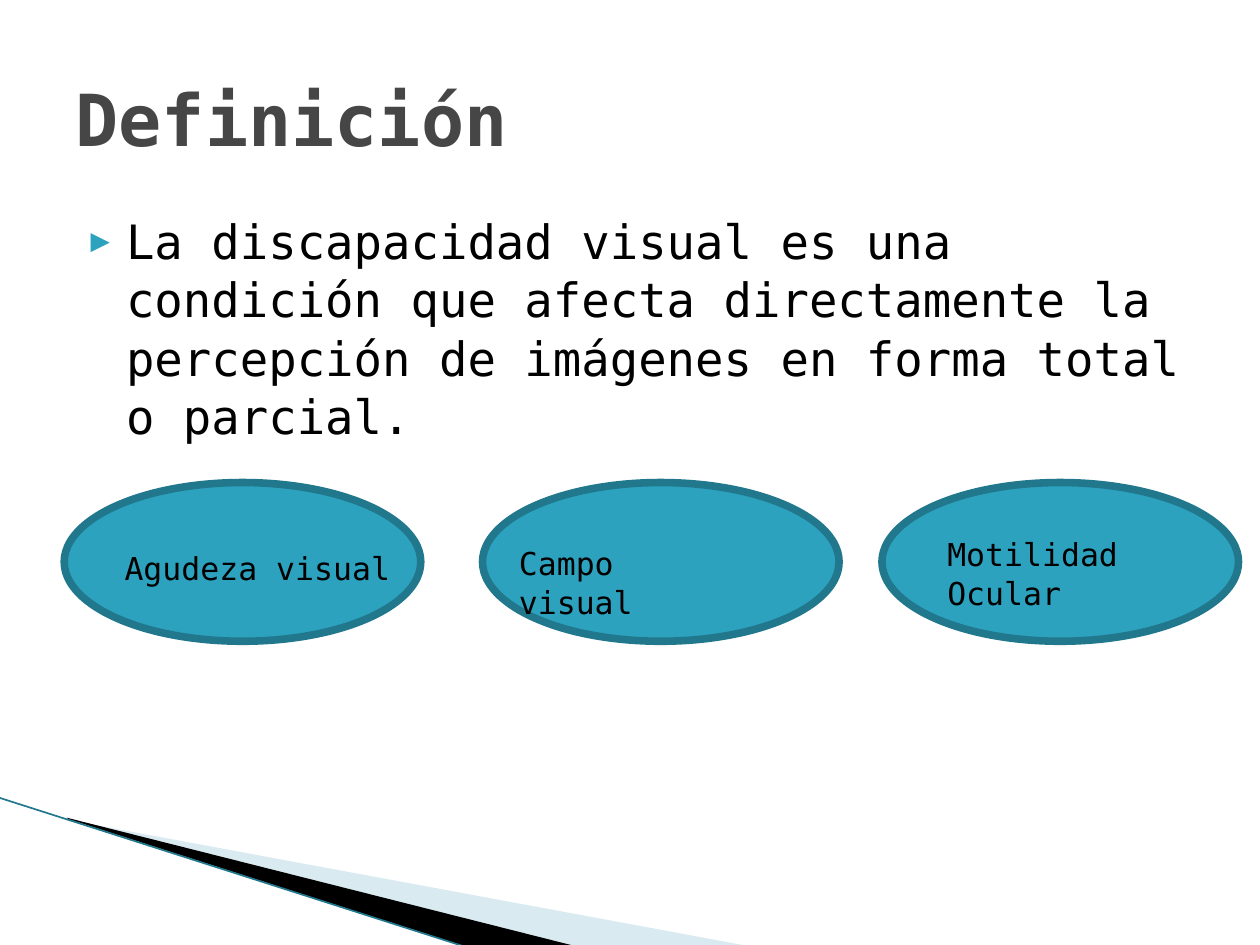
"""Build the slide that defines visual impairment, with three ovals."""
from lxml.etree import SubElement
from pptx import Presentation
from pptx.dml.color import RGBColor
from pptx.enum.shapes import MSO_CONNECTOR, MSO_SHAPE
from pptx.enum.text import MSO_ANCHOR, PP_ALIGN
from pptx.oxml.ns import qn
from pptx.util import Inches, Pt


def paint(color, code):
    color.rgb = RGBColor.from_string(code)


def write(shape, text, size, code="000000", bold=False):
    frame = shape.text_frame
    frame.word_wrap = True
    frame.text = text
    para = frame.paragraphs[0]
    para.alignment = PP_ALIGN.LEFT
    para.space_before = Pt(0)
    para.line_spacing = 1.03
    font = para.runs[0].font
    font.name, font.size, font.bold = "DejaVu Sans Mono", Pt(size), bold
    paint(font.color, code)
    return para


deck = Presentation()
deck.slide_width, deck.slide_height = Inches(10), Inches(7.5)
slide = deck.slides.add_slide(deck.slide_layouts[1])
shapes = slide.shapes
title, body = slide.placeholders

wedges = [
    ("A0CBDC", [(55, 651), (595, 751), (456, 751), (55, 650)]),
    ("000000", [(53, 649), (457, 751), (372, 752), (54, 650)]),
]
for code, points in wedges:
    pen = shapes.build_freeform(*points[0], scale=Inches(0.01))
    pen.add_line_segments(points[1:])
    wedge = pen.convert_to_shape()
    wedge.shadow.inherit = False
    wedge.fill.solid()
    paint(wedge.fill.fore_color, code)
    wedge.line.fill.background()
    if code == "A0CBDC":
        tint = wedge.fill._xPr.find(".//" + qn("a:srgbClr"))
        SubElement(tint, qn("a:alpha"), val="40000")

edge = shapes.add_connector(MSO_CONNECTOR.STRAIGHT, Inches(-0.01), Inches(6.33),
                            Inches(3.71), Inches(7.52))
paint(edge.line.color, "21788D")
edge.line.width = Pt(0.95)
SubElement(edge._element.spPr, qn("a:effectLst"))

for holder, top, height in [(title, 0.3, 1.25), (body, 1.62, 4.95)]:
    holder.left, holder.width = Inches(0.5), Inches(9)
    holder.top, holder.height = Inches(top), Inches(height)
write(title, "Definición", 41, "464646", True)
title.text_frame.vertical_anchor = MSO_ANCHOR.MIDDLE
para = write(body, "La discapacidad visual es una condición que afecta directamente "
             "la percepción de imágenes en forma total o parcial.", 27)
props = para._p.get_or_add_pPr()
props.set("marL", str(Inches(0.4)))
props.set("indent", str(Inches(-0.28)))
tone = SubElement(props, qn("a:buClr"))
SubElement(tone, qn("a:srgbClr"), val="2DA2BF")
SubElement(props, qn("a:buSzPct"), val="68000")
SubElement(props, qn("a:buFont"), typeface="DejaVu Sans Mono")
SubElement(props, qn("a:buChar"), char="▶")

parts = [
    ("Agudeza visual", 0.51, 0.89, 4.3, 2.36),
    ("Campo visual", 3.83, 4.02, 4.26, 1.97),
    ("Motilidad Ocular", 7, 7.42, 4.19, 2.24),
]
for text, left, inset, top, width in parts:
    oval = shapes.add_shape(MSO_SHAPE.OVAL, Inches(left), Inches(3.83),
                            Inches(2.83), Inches(1.26))
    oval.shadow.inherit = False
    oval.fill.solid()
    paint(oval.fill.fore_color, "2DA2BF")
    paint(oval.line.color, "21788D")
    oval.line.width = Pt(4.33)
    label = shapes.add_textbox(Inches(inset), Inches(top), Inches(width), Inches(0.4))
    write(label, text, 18)

deck.save("out.pptx")
